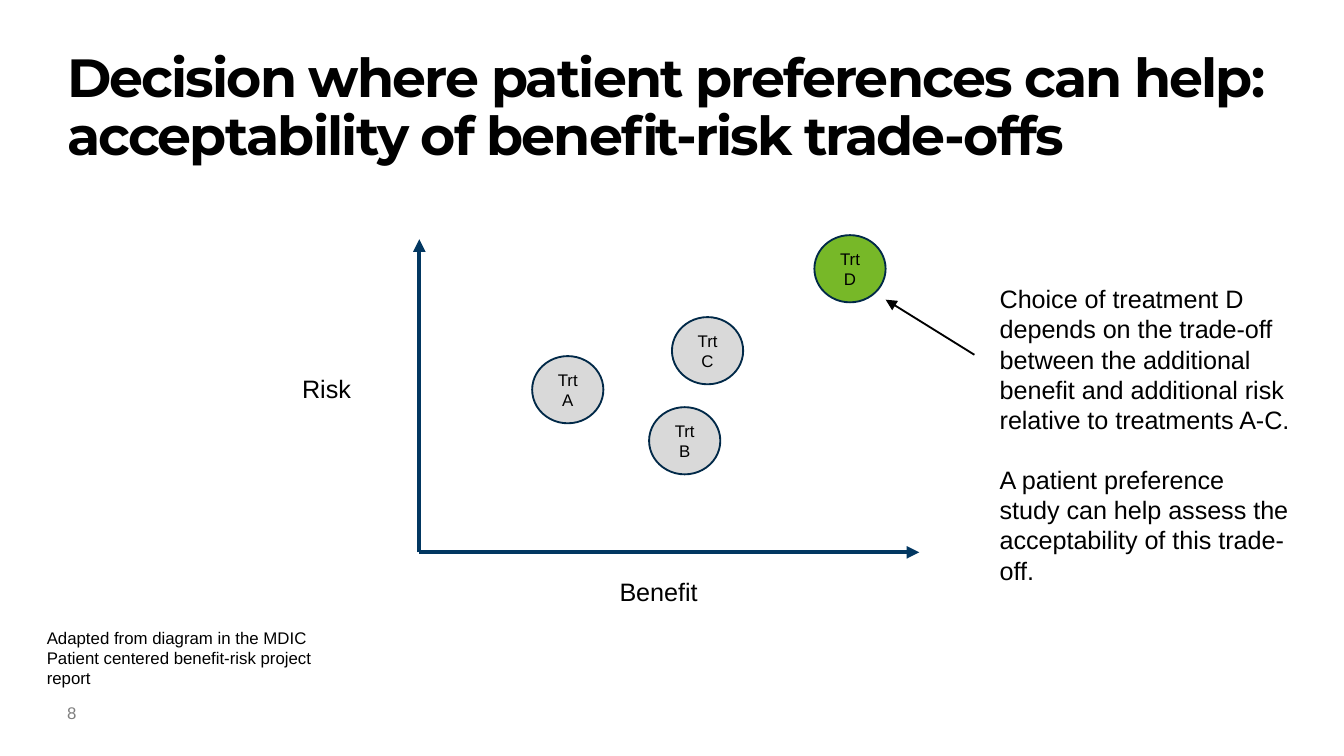
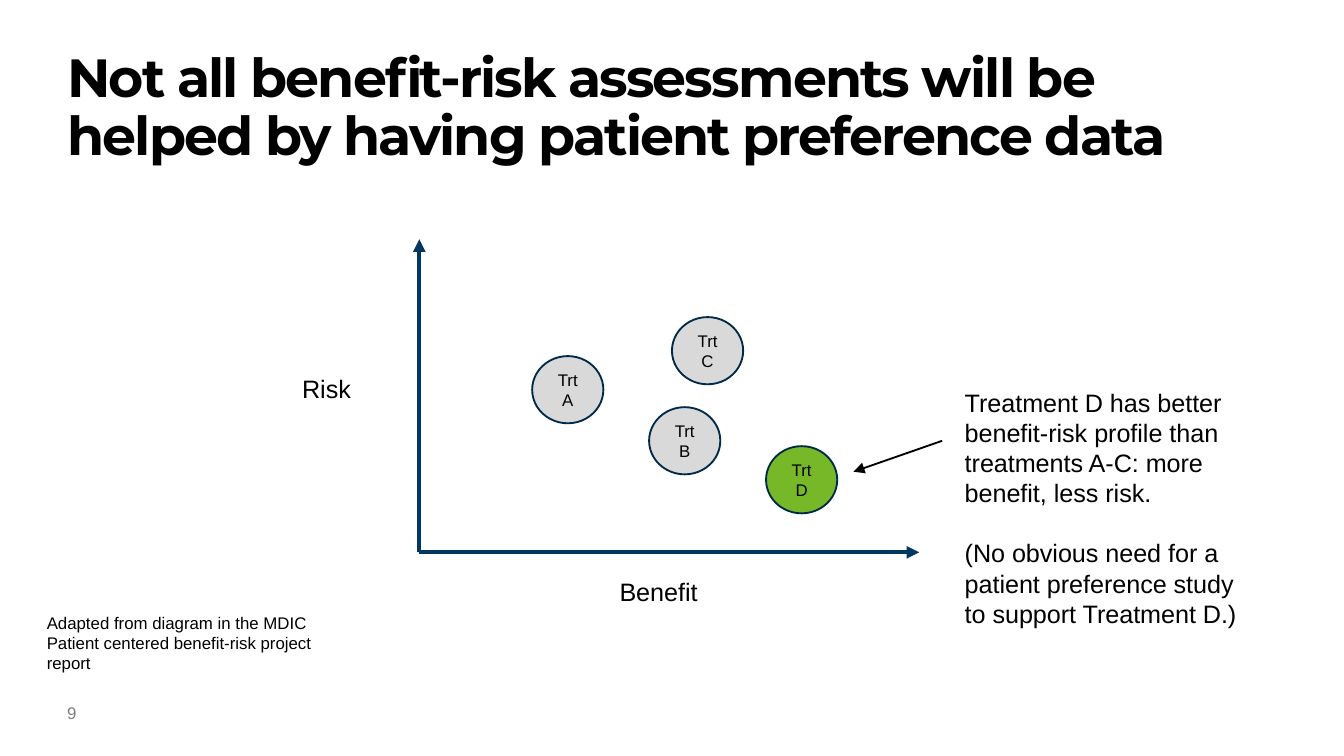
from lxml.etree import SubElement
from pptx import Presentation
from pptx.dml.color import RGBColor
from pptx.enum.shapes import MSO_CONNECTOR, MSO_SHAPE
from pptx.enum.text import MSO_ANCHOR, MSO_AUTO_SIZE, PP_ALIGN
from pptx.oxml.ns import qn
from pptx.util import Inches, Pt

BLACK = RGBColor(0x00, 0x00, 0x00)
WHITE = RGBColor(0xFF, 0xFF, 0xFF)
GRAY = RGBColor(0x7F, 0x7F, 0x7F)
LIGHT_GRAY = RGBColor(0xD9, 0xD9, 0xD9)
GREEN = RGBColor(0x77, 0xB8, 0x28)
NAVY = RGBColor(0x02, 0x37, 0x61)
DARK_NAVY = RGBColor(0x01, 0x29, 0x48)

BODY, SMALL = 13.5, 9
ORIGIN = (3.12, 4.11)
CIRCLE = (0.53, 0.5)
SOURCE = "Adapted from diagram in the MDIC Patient centered benefit-risk project report"
LABELS = [("Risk", (1.86, 2.76, 1.14, 0.26)), ("Benefit", (3.99, 4.29, 1.82, 0.22))]
TREATMENTS = [("Trt A", (3.96, 2.65)), ("Trt B", (4.83, 3.03)), ("Trt C", (5, 2.36))]

SLIDES = [
    dict(
        number="8",
        title="Decision where patient preferences can help: "
              "acceptability of benefit-risk trade-offs",
        treatment_d=(6.06, 1.75),
        comment=["Choice of treatment D depends on the trade-off between the additional "
                 "benefit and additional risk relative to treatments A-C.",
                 "A patient preference study can help assess the acceptability "
                 "of this trade-off."],
        comment_at=(7.34, 2.06, 2.36, 2.6),
        pointer=((7.25, 2.64), (6.59, 2.23)),
        source_top=4.62,
    ),
    dict(
        number="9",
        title="Not all benefit-risk assessments will be helped by having "
              "patient preference data",
        treatment_d=(5.7, 3.32),
        comment=["Treatment D has better benefit-risk profile than treatments A-C: "
                 "more benefit, less risk.",
                 "(No obvious need for a patient preference study to support "
                 "Treatment D.)"],
        comment_at=(7.08, 2.83, 2.36, 1.92),
        pointer=((7.01, 3.28), (6.35, 3.51)),
        source_top=4.51,
    ),
]


def write(sp, paragraphs, size, color=BLACK, align=PP_ALIGN.LEFT):
    """Fill a shape with Arial paragraphs set one line apart."""
    tf = sp.text_frame
    tf.word_wrap = True
    tf.text = "\n".join(paragraphs)
    for i, p in enumerate(tf.paragraphs):
        p.alignment = align
        if i:
            p.space_before = Pt(16)
        for r in p.runs:
            r.font.name, r.font.size, r.font.color.rgb = "Arial", Pt(size), color


def add_arrow(s, start, end, color, width):
    ends = [Inches(v) for v in (*start, *end)]
    line = s.shapes.add_connector(MSO_CONNECTOR.STRAIGHT, *ends)
    line.line.color.rgb, line.line.width = color, Pt(width)
    SubElement(line.line._get_or_add_ln(), qn("a:tailEnd"), type="triangle")
    SubElement(line._element.spPr, qn("a:effectLst"))


prs = Presentation()
prs.slide_width = Inches(10)
prs.slide_height = prs.slide_width * 9 // 16

for slide in SLIDES:
    s = prs.slides.add_slide(prs.slide_layouts[5])

    title = s.shapes.title
    title.left, title.top, title.width, title.height = map(Inches, (0.5, 0.38, 9, 1.05))
    number = s.shapes.add_textbox(*map(Inches, (0.5, 5.23, 0.25, 0.25)))
    for sp in (title, number):
        tf = sp.text_frame
        tf.margin_left = tf.margin_top = tf.margin_right = tf.margin_bottom = 0
    write(number, [slide["number"]], SMALL, GRAY)

    tf = title.text_frame
    tf.text = slide["title"]
    tf.word_wrap = True
    tf.auto_size = MSO_AUTO_SIZE.NONE
    tf.vertical_anchor = MSO_ANCHOR.TOP
    p = tf.paragraphs[0]
    p.alignment, p.line_spacing = PP_ALIGN.LEFT, 0.9
    r = p.runs[0]
    r.font.name, r.font.size, r.font.bold = "Montserrat", Pt(28.8), True
    r.font.color.rgb = BLACK
    r.font._element.set("spc", "-100")

    for axis_end in ((6.84, ORIGIN[1]), (ORIGIN[0], 1.78)):
        add_arrow(s, ORIGIN, axis_end, NAVY, 2.25)

    shapes = [(text, MSO_SHAPE.ROUNDED_RECTANGLE, at, WHITE, WHITE, BODY)
              for text, at in LABELS]
    shapes += [(text, MSO_SHAPE.OVAL, at + CIRCLE, LIGHT_GRAY, DARK_NAVY, SMALL)
               for text, at in TREATMENTS]
    shapes.append(("Trt D", MSO_SHAPE.OVAL, slide["treatment_d"] + CIRCLE,
                   GREEN, DARK_NAVY, SMALL))
    for text, kind, at, fill, outline, size in shapes:
        sp = s.shapes.add_shape(kind, *map(Inches, at))
        sp.shadow.inherit = False
        sp.fill.solid()
        sp.fill.fore_color.rgb = fill
        sp.line.color.rgb, sp.line.width = outline, Pt(1)
        sp.text_frame.vertical_anchor = MSO_ANCHOR.MIDDLE
        write(sp, [text], size, align=PP_ALIGN.CENTER)

    comment = s.shapes.add_textbox(*map(Inches, slide["comment_at"]))
    write(comment, slide["comment"], BODY)
    add_arrow(s, *slide["pointer"], BLACK, 1)
    source = s.shapes.add_textbox(*map(Inches, (0.25, slide["source_top"], 2.36, 0.56)))
    write(source, [SOURCE], SMALL)
    for sp in (comment, source):
        sp.text_frame.auto_size = MSO_AUTO_SIZE.SHAPE_TO_FIT_TEXT

prs.save("out.pptx")
